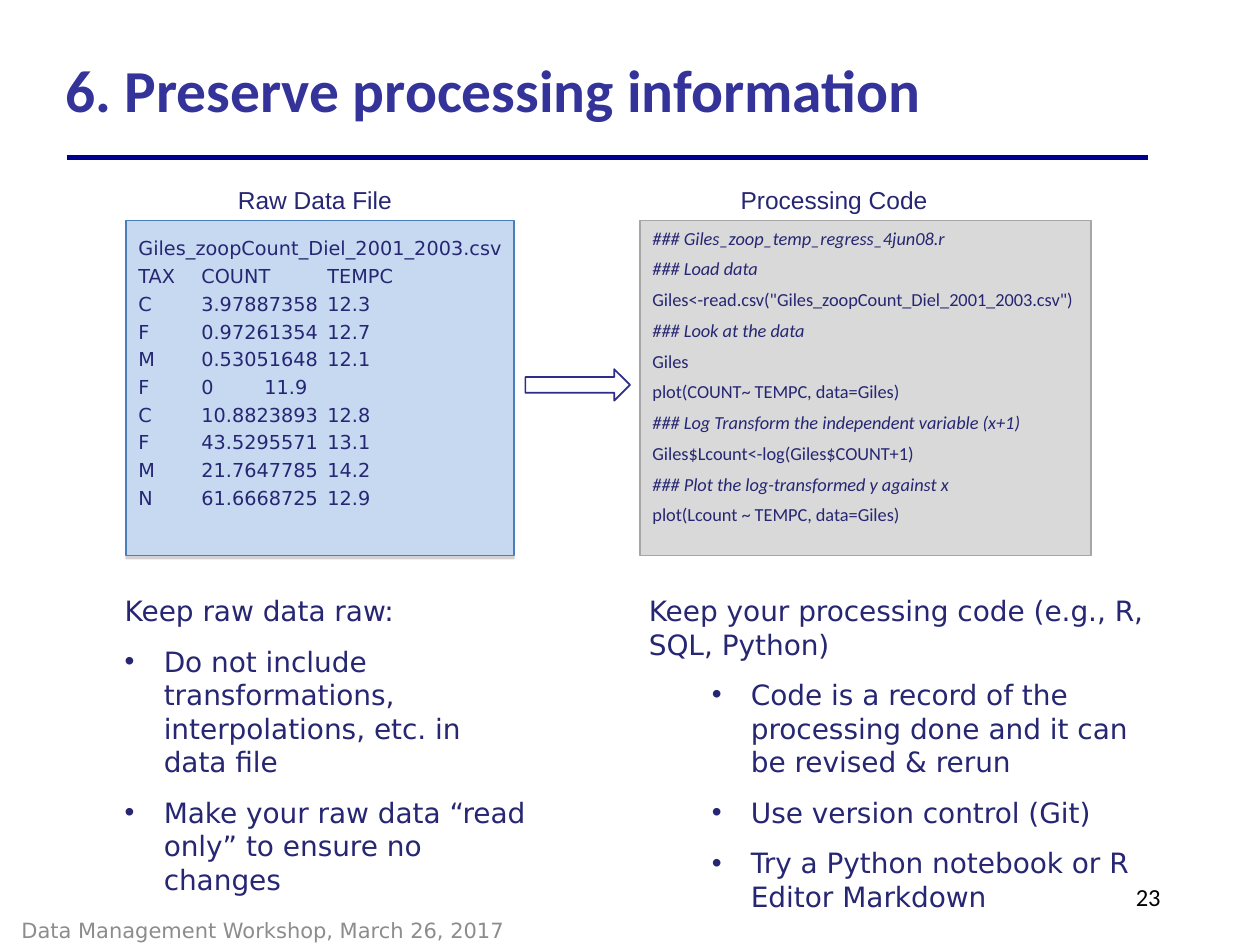
import pptx
import pptx.util
import pptx.oxml
import pptx.oxml.ns
import pptx.dml.color
import pptx.enum.shapes
import pptx.enum.text
from lxml import etree

Inches, Pt = pptx.util.Inches, pptx.util.Pt
SHAPE = pptx.enum.shapes.MSO_SHAPE
ALIGN = pptx.enum.text.PP_ALIGN
ANCHOR = pptx.enum.text.MSO_ANCHOR
qn = pptx.oxml.ns.qn

COLORS = {
    "title": "333399", "rule": "000090", "text": "262673", "footer": "8C8C8C",
    "number": "000000", "data_fill": "C6D9F1", "data_line": "4A7EBB",
    "code_fill": "D9D9D9", "code_line": "A6A6A6", "arrow_fill": "FFFFFF",
    "arrow_line": "2D2D8A", "shadow": "808080",
}

RAW_DATA = [
    ("TAX", "COUNT", "TEMPC"),
    ("C", "3.97887358", "12.3"),
    ("F", "0.97261354", "12.7"),
    ("M", "0.53051648", "12.1"),
    ("F", "0", "11.9"),
    ("C", "10.8823893", "12.8"),
    ("F", "43.5295571", "13.1"),
    ("M", "21.7647785", "14.2"),
    ("N", "61.6668725", "12.9"),
]
CODE = [
    "### Giles_zoop_temp_regress_4jun08.r",
    "### Load data",
    'Giles<-read.csv("Giles_zoopCount_Diel_2001_2003.csv")',
    "### Look at the data",
    "Giles",
    "plot(COUNT~ TEMPC, data=Giles)",
    "### Log Transform the independent variable (x+1)",
    "Giles$Lcount<-log(Giles$COUNT+1)",
    "### Plot the log-transformed y against x",
    "plot(Lcount ~ TEMPC, data=Giles)",
]
RAW_ADVICE = [
    "Do not include transformations, interpolations, etc. in data file",
    "Make your raw data “read only” to ensure no changes",
]
CODE_ADVICE = [
    "Code is a record of the processing done and it can be revised & rerun",
    "Use version control (Git)",
    "Try a Python notebook or R Editor Markdown",
]


def rgb(name):
    return pptx.dml.color.RGBColor.from_string(COLORS[name])


def fill_text(tf, lines, size, font, color="text", align=ALIGN.LEFT,
              before=0, after=0, bold=False):
    """Write one paragraph per line; lines starting with ### are italic."""
    tf.word_wrap = True
    for i, line in enumerate(lines):
        p = tf.paragraphs[0] if i == 0 else tf.add_paragraph()
        p.text = line
        p.alignment = align
        p.space_before, p.space_after = Pt(before), Pt(after)
        for r in p.runs:
            r.font.size, r.font.name, r.font.bold = Pt(size), font, bold
            r.font.italic = line.startswith("###")
            r.font.color.rgb = rgb(color)


def add_text(slide, box, lines, size, font, anchor=ANCHOR.TOP, **style):
    tf = slide.shapes.add_textbox(*map(Inches, box)).text_frame
    tf.vertical_anchor = anchor
    fill_text(tf, lines, size, font, **style)
    return tf


def add_block(slide, kind, box, fill, line, width=0.75):
    sp = slide.shapes.add_shape(kind, *map(Inches, box))
    sp.shadow.inherit = False
    sp.fill.solid()
    sp.fill.fore_color.rgb = rgb(fill)
    sp.line.color.rgb = rgb(line)
    sp.line.width = Pt(width)
    return sp


def add_drop_shadow(sp):
    effects = sp._element.spPr.find(qn("a:effectLst"))
    shadow = etree.SubElement(effects, qn("a:outerShdw"), blurRad="0",
                              dist=str(Pt(1.8)), dir="5400000", rotWithShape="0")
    color = etree.SubElement(shadow, qn("a:srgbClr"), val=COLORS["shadow"])
    etree.SubElement(color, qn("a:alpha"), val="35000")


def add_header(slide, box):
    left, top, width, height = box
    add_text(slide, box, ["6. Preserve processing information"], 34, "Calibri",
             anchor=ANCHOR.MIDDLE, color="title", bold=True)
    y = Inches(top + height - 0.08)
    rule = slide.shapes.add_connector(
        pptx.enum.shapes.MSO_CONNECTOR.STRAIGHT,
        Inches(left + 0.11), y, Inches(left + width - 0.39), y)
    rule.line.color.rgb = rgb("rule")
    rule.line.width = Pt(2.75)
    etree.SubElement(rule._element.spPr, qn("a:effectLst"))


def add_caption(slide, box, caption):
    add_text(slide, box, [caption], 14, "Arial", align=ALIGN.CENTER)


def add_data_panel(slide, box):
    left, top, width, height = box
    add_drop_shadow(add_block(slide, SHAPE.RECTANGLE, box, "data_fill", "data_line"))
    lines = ["Giles_zoopCount_Diel_2001_2003.csv"] + ["\t".join(row) for row in RAW_DATA]
    add_text(slide, (left, top + 0.08, width + 0.75, height - 0.19), lines,
             11, "DejaVu Sans", before=2.6)


def add_code_panel(slide, box):
    tf = add_block(slide, SHAPE.RECTANGLE, box, "code_fill", "code_line").text_frame
    tf.vertical_anchor = ANCHOR.TOP
    fill_text(tf, CODE, 10.5, "Calibri", before=5)


def add_advice(slide, box, lead, bullets, indent):
    tf = add_text(slide, box, [lead] + bullets, 16, "DejaVu Sans",
                  before=3.7, after=6)
    tf.margin_left = tf.margin_right = Inches(0.07)
    tf.margin_top = tf.margin_bottom = Inches(0.04)
    for p in tf.paragraphs[1:]:
        pPr = p._p.get_or_add_pPr()
        pPr.set("marL", str(Inches(indent)))
        pPr.set("indent", str(Inches(-0.31)))
        etree.SubElement(pPr, qn("a:buFont"), typeface="Arial")
        etree.SubElement(pPr, qn("a:buChar"), char="•")


def add_footer(slide, box):
    left, top, width, height = box
    tf = add_text(slide, (left, top, 5.58, height),
                  ["Data Management Workshop, March 26, 2017"], 12, "DejaVu Sans",
                  anchor=ANCHOR.MIDDLE, color="footer")
    tf.margin_left = Inches(0)
    add_text(slide, (left + width - 2.25, top - 0.23, 2.25, height), ["23"],
             14, "Calibri", color="number", align=ALIGN.RIGHT)


def main():
    prs = pptx.Presentation()
    prs.slide_width, prs.slide_height = Inches(10), Inches(7.5)
    slide = prs.slides.add_slide(prs.slide_layouts[6])

    add_header(slide, (0.42, 0.08, 9.08, 1.25))

    # Raw data column
    add_caption(slide, (1, 1.42, 3, 0.34), "Raw Data File")
    add_data_panel(slide, (1, 1.75, 3.08, 2.66))
    add_advice(slide, (0.92, 4.67, 3.33, 2.5), "Keep raw data raw:", RAW_ADVICE, 0.31)

    # Processing code column
    add_caption(slide, (5.12, 1.42, 3, 0.34), "Processing Code")
    add_code_panel(slide, (5.08, 1.75, 3.58, 2.66))
    add_advice(slide, (5.08, 4.67, 4.23, 2.64),
               "Keep your processing code (e.g., R, SQL, Python)", CODE_ADVICE, 0.81)

    # Arrow from data to code
    add_block(slide, SHAPE.RIGHT_ARROW, (4.17, 2.93, 0.83, 0.25),
              "arrow_fill", "arrow_line", 1)

    add_footer(slide, (0.17, 7.18, 9.14, 0.4))
    prs.save("out.pptx")


if __name__ == "__main__":
    main()
